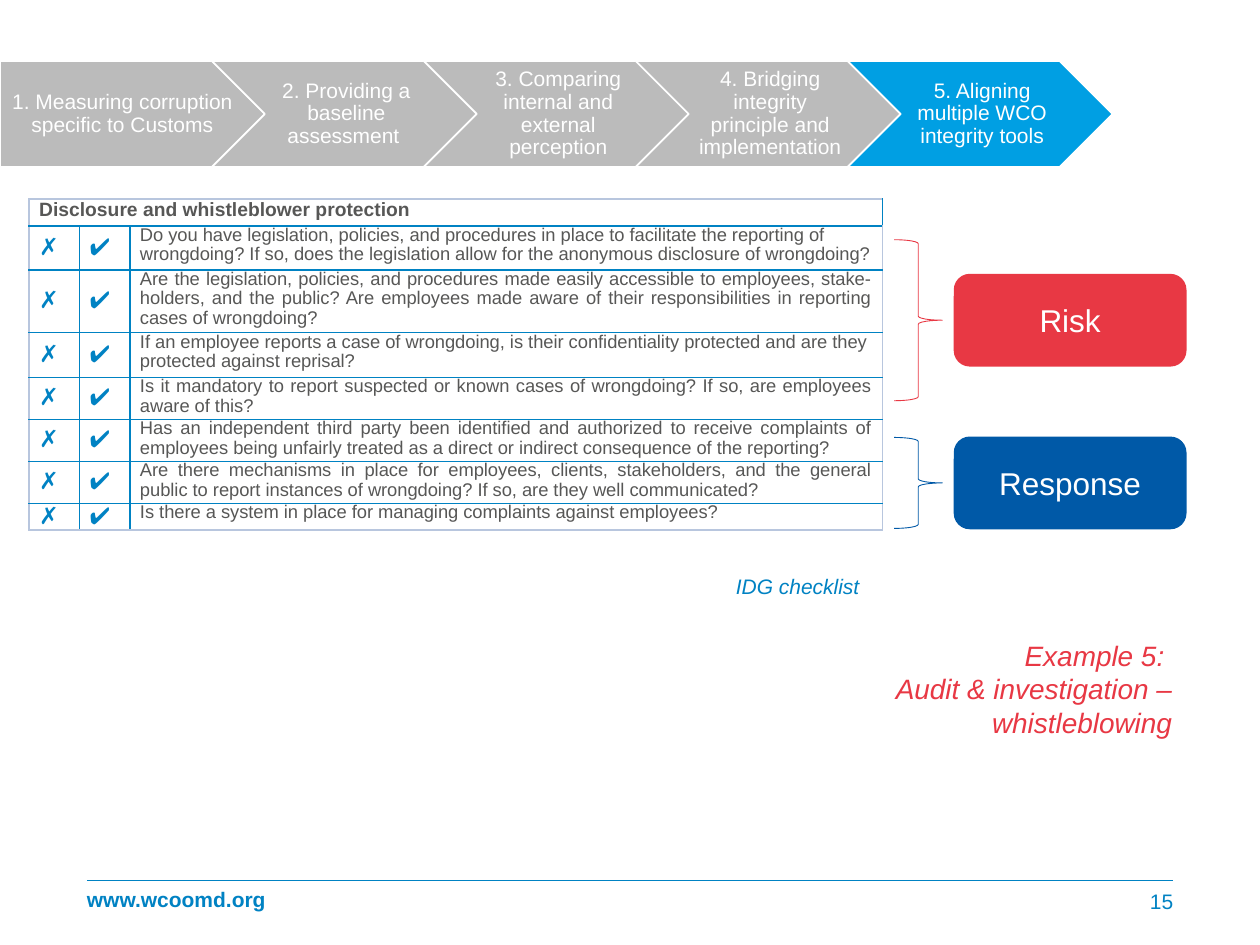
import pptx
import pptx.util
import pptx.dml.color
import pptx.enum.shapes
import pptx.enum.text
import pptx.oxml
import pptx.oxml.ns

Pt = pptx.util.Pt
RGBColor = pptx.dml.color.RGBColor
Shape = pptx.enum.shapes.MSO_SHAPE
Anchor = pptx.enum.text.MSO_ANCHOR
Align = pptx.enum.text.PP_ALIGN
AutoSize = pptx.enum.text.MSO_AUTO_SIZE

BLUE = RGBColor(0x00, 0x82, 0xC3)
BRIGHT_BLUE = RGBColor(0x00, 0x9F, 0xE3)
DARK_BLUE = RGBColor(0x00, 0x59, 0xA7)
PALE_BLUE = RGBColor(0xB8, 0xC6, 0xDE)
RED = RGBColor(0xE8, 0x38, 0x44)
GREY = RGBColor(0xBB, 0xBB, 0xBB)
TEXT_GREY = RGBColor(0x57, 0x57, 0x56)
WHITE = RGBColor(0xFF, 0xFF, 0xFF)

STEPS = [
    "1. Measuring corruption specific to Customs",
    "2. Providing a baseline assessment ",
    "3. Comparing internal and external perception",
    "4. Bridging integrity principle and implementation",
    "5. Aligning multiple WCO integrity tools",
]
CHECKLIST = [
    ("Do you have legislation, policies, and procedures in place to facilitate the reporting of "
     "wrongdoing? If so, does the legislation allow for the anonymous disclosure of wrongdoing?",
     Align.LEFT, 25.2),
    ("Are the legislation, policies, and procedures made easily accessible to employees, stake- "
     "holders, and the public? Are employees made aware of their responsibilities in reporting "
     "cases of wrongdoing?", Align.JUSTIFY, 34.9),
    ("If an employee reports a case of wrongdoing, is their confidentiality protected and are "
     "they protected against reprisal?", Align.LEFT, 25.6),
    ("Is it mandatory to report suspected or known cases of wrongdoing? If so, are employees "
     "aware of this?", Align.JUSTIFY, 23.4),
    ("Has an independent third party been identified and authorized to receive complaints of "
     "employees being unfairly treated as a direct or indirect consequence of the reporting?",
     Align.JUSTIFY, 23.4),
    ("Are there mechanisms in place for employees, clients, stakeholders, and the general "
     "public to report instances of wrongdoing? If so, are they well communicated?",
     Align.JUSTIFY, 23.4),
    ("Is there a system in place for managing complaints against employees?",
     Align.JUSTIFY, 15),
]


def apply(target, values):
    for name, value in values.items():
        setattr(target, name, value)


def write(frame, lines, size, color, align=Align.LEFT, spacing=1.0, **font_values):
    frame.text = "\n".join(lines)
    for para in frame.paragraphs:
        apply(para, {"alignment": align, "line_spacing": spacing})
        for span in para.runs:
            apply(span.font, {"name": "Arial", "size": Pt(size), **font_values})
            span.font.color.rgb = color


def set_insets(target, left, top, right, bottom):
    apply(target, {"margin_left": Pt(left), "margin_top": Pt(top),
                   "margin_right": Pt(right), "margin_bottom": Pt(bottom)})


def add_text(page, place, text, size, color, insets, anchor=Anchor.TOP, **format_values):
    box = page.shapes.add_textbox(*map(Pt, place))
    apply(box.text_frame, {"word_wrap": True, "vertical_anchor": anchor})
    set_insets(box.text_frame, *insets)
    write(box.text_frame, [text], size, color, **format_values)


def add_shape(page, kind, place, fill, line, width):
    shape = page.shapes.add_shape(kind, *map(Pt, place))
    shape.shadow.inherit = False
    if fill is None:
        shape.fill.background()
    else:
        shape.fill.solid()
        shape.fill.fore_color.rgb = fill
    shape.line.color.rgb = line
    shape.line.width = Pt(width)
    return shape


def add_steps(page):
    for index, text in enumerate(STEPS):
        kind = Shape.CHEVRON if index else Shape.PENTAGON
        fill = BRIGHT_BLUE if index == len(STEPS) - 1 else GREY
        step = add_shape(page, kind, (121.1 * index, 34.9, 151.4, 60.5), fill, WHITE, 1)
        apply(step.text_frame, {"word_wrap": True, "vertical_anchor": Anchor.MIDDLE})
        set_insets(step.text_frame, 3.6 if index else 5, 2.6, 1.3, 2.6)
        write(step.text_frame, [text], 12, WHITE, Align.CENTER, 0.9)


def add_border(cell, side, color, width):
    properties = cell._tc.get_or_add_tcPr()
    properties.append(pptx.oxml.parse_xml(
        f'<a:{side} {pptx.oxml.ns.nsdecls("a")} w="{Pt(width)}"><a:solidFill>'
        f'<a:srgbClr val="{color}"/></a:solidFill></a:{side}>'))


def add_checklist(page):
    heights = [15.2] + [height for _, _, height in CHECKLIST]
    widths = [28.8, 28.8, 430]
    last_row, last_column = len(heights) - 1, len(widths) - 1
    frame = page.shapes.add_table(len(heights), len(widths), Pt(16.6), Pt(113.8),
                                  Pt(sum(widths)), Pt(sum(heights)))
    table = frame.table
    apply(table, {"first_row": False, "horz_banding": False})
    for column, width in zip(table.columns, widths):
        column.width = Pt(width)
    for row_index, (row, height) in enumerate(zip(table.rows, heights)):
        row.height = Pt(height)
        for column_index, cell in enumerate(row.cells):
            edges = {"lnL": column_index == 0, "lnR": column_index == last_column,
                     "lnT": row_index == 0, "lnB": row_index == last_row}
            for side, outer in edges.items():
                add_border(cell, side, PALE_BLUE if outer else BLUE, 1)
            cell.fill.background()
            set_insets(cell, 5.8, 0, 5.8, 0)
    table.cell(0, 0).merge(table.cell(0, last_column))
    write(table.cell(0, 0).text_frame, ["Disclosure and whistleblower protection"],
          11, TEXT_GREY, bold=True)
    for row_index, (question, align, _) in enumerate(CHECKLIST, 1):
        for column_index, mark in enumerate("✗✔"):
            cell = table.cell(row_index, column_index)
            cell.vertical_anchor = Anchor.MIDDLE
            write(cell.text_frame, [mark], 13.5, BLUE, align, 0.95)
        write(table.cell(row_index, last_column).text_frame, [question],
              10.5, TEXT_GREY, align, 0.95)


def add_category(page, text, color, box_top, brace_top, brace_height):
    box = add_shape(page, Shape.ROUNDED_RECTANGLE, (545.5, box_top, 132, 52), color, color, 1)
    box.text_frame.vertical_anchor = Anchor.MIDDLE
    write(box.text_frame, [text], 18, WHITE, Align.CENTER)
    add_shape(page, Shape.RIGHT_BRACE, (511, brace_top, 27.5, brace_height), None, color, 0.5)


def add_title(page):
    title = page.shapes.title
    apply(title, {"left": Pt(498), "top": Pt(361), "width": Pt(179), "height": Pt(65.5)})
    apply(title.text_frame, {"word_wrap": True, "vertical_anchor": Anchor.TOP,
                             "auto_size": AutoSize.NONE})
    write(title.text_frame, ["Example 5: ", "Audit & investigation – whistleblowing"],
          16, RED, Align.RIGHT, italic=True)


def add_footer(page):
    rule = page.shapes.add_connector(pptx.enum.shapes.MSO_CONNECTOR.STRAIGHT,
                                     Pt(49.7), Pt(503), Pt(670.3), Pt(503))
    rule.line.color.rgb = BLUE
    rule.line.width = Pt(0.5)
    rule._element.spPr.append(
        pptx.oxml.parse_xml(f'<a:effectLst {pptx.oxml.ns.nsdecls("a")}/>'))
    add_text(page, (49.7, 500, 105, 29), "www.wcoomd.org", 12, BLUE, (0, 3.6, 0, 3.6),
             Anchor.MIDDLE, spacing=0.9, bold=True)
    add_text(page, (625, 500.5, 45.4, 29), "15", 12, BLUE, (7.2, 3.6, 0, 3.6),
             Anchor.MIDDLE, align=Align.RIGHT)


def main():
    deck = pptx.Presentation()
    apply(deck, {"slide_width": Pt(720), "slide_height": Pt(540)})
    page = deck.slides.add_slide(deck.slide_layouts.get_by_name("Title Only"))
    add_footer(page)
    add_steps(page)
    add_checklist(page)
    add_category(page, "Risk", RED, 157, 137, 92)
    add_category(page, "Response", DARK_BLUE, 250, 250, 52)
    add_title(page)
    add_text(page, (270.7, 324.3, 227.5, 21.8), "IDG checklist", 12, BLUE,
             (7.2, 3.6, 7.2, 3.6), align=Align.RIGHT, italic=True)
    deck.save("out.pptx")


if __name__ == "__main__":
    main()
